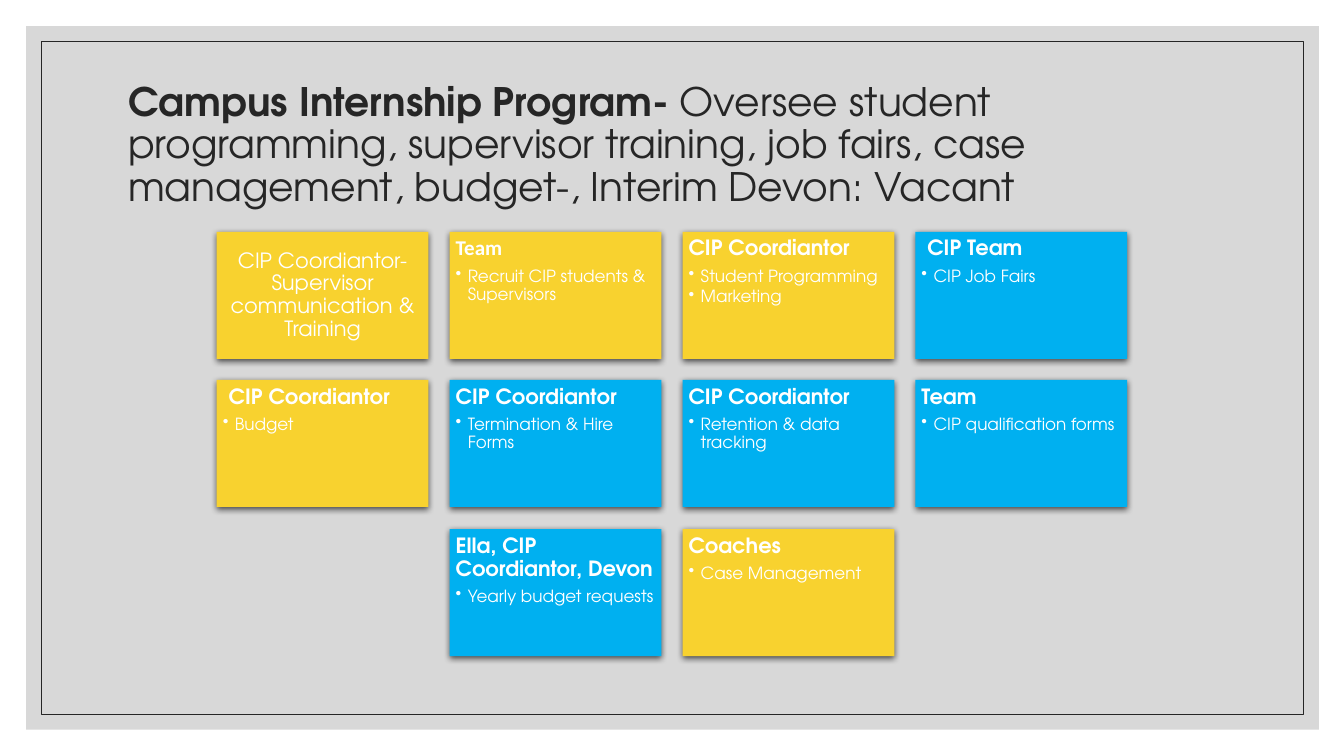
import pptx
import pptx.util
import pptx.dml.color
import pptx.enum.shapes
import pptx.enum.text
import pptx.oxml
import pptx.oxml.ns

PX = 9144  # EMU in one px, 100 px to the inch
FONT = "TeX Gyre Adventor"
COLORS = {"panel": "BFBFBF", "ink": "262626", "yellow": "F8D22F",
          "blue": "00B0F0", "white": "FFFFFF", "shadow": "000000"}

COLUMNS = 4
CARD_WIDTH, CARD_HEIGHT = 210, 126
GRID_LEFT, GRID_TOP = 215, 230
COLUMN_PITCH, TWO_ROW_PITCH = 231, 295

# Each card: fill, heading, duties
ROWS = [
    [("yellow", "CIP Coordiantor-Supervisor communication & Training", []),
     ("yellow", "Team", ["Recruit CIP students & Supervisors"]),
     ("yellow", "CIP Coordiantor", ["Student Programming", "Marketing"]),
     ("blue", " CIP Team", ["CIP Job Fairs"])],
    [("yellow", " CIP Coordiantor", ["Budget"]),
     ("blue", "CIP Coordiantor", ["Termination & Hire Forms"]),
     ("blue", "CIP Coordiantor", ["Retention & data tracking"]),
     ("blue", "Team", ["CIP qualification forms"])],
    [("blue", "Ella, CIP Coordiantor, Devon", ["Yearly budget requests"]),
     ("yellow", "Coaches", ["Case Management"])],
]


def px(length):
    return pptx.util.Emu(length * PX)


def rgb(name):
    return pptx.dml.color.RGBColor.from_string(COLORS[name])


def xml(tag, attributes, inner=""):
    namespace = pptx.oxml.ns.nsdecls("a")
    return pptx.oxml.parse_xml(f"<a:{tag} {namespace} {attributes}>{inner}</a:{tag}>")


def add_rectangle(slide, left, top, width, height):
    rectangle = slide.shapes.add_shape(
        pptx.enum.shapes.MSO_SHAPE.RECTANGLE,
        px(left), px(top), px(width), px(height))
    rectangle.shadow.inherit = False
    return rectangle


def format_run(run, size, color, bold, font=FONT):
    run.font.name = font
    run.font.size = pptx.util.Pt(size)
    run.font.bold = bold
    run.font.color.rgb = rgb(color)


def format_paragraph(paragraph, align, space_after):
    paragraph.alignment = align
    paragraph.line_spacing = 0.9
    paragraph.space_before = pptx.util.Pt(0)
    paragraph.space_after = pptx.util.Pt(space_after)


def add_background(slide):
    panel = add_rectangle(slide, 26, 26, 1282, 698)
    panel.fill.solid()
    panel.fill.fore_color.rgb = rgb("panel")
    panel.line.fill.background()
    panel_color = panel.fill._xPr.find(".//" + pptx.oxml.ns.qn("a:srgbClr"))
    panel_color.append(xml("alpha", 'val="60000"'))

    border = add_rectangle(slide, 41, 41, 1252, 668)
    border.fill.background()
    border.line.color.rgb = rgb("ink")
    border.line.width = pptx.util.Pt(0.5)


def add_title(slide, program, summary):
    title = slide.shapes.title
    title.left, title.top, title.width, title.height = px(117), px(70), px(1100), px(150)
    frame = title.text_frame
    frame.auto_size = pptx.enum.text.MSO_AUTO_SIZE.NONE
    frame.vertical_anchor = pptx.enum.text.MSO_ANCHOR.MIDDLE
    paragraph = frame.paragraphs[0]
    format_paragraph(paragraph, pptx.enum.text.PP_ALIGN.LEFT, 6)
    for text, bold in ((program, True), (summary, False)):
        run = paragraph.add_run()
        run.text = text
        format_run(run, 28, "ink", bold)
    # Bring the title in front of the background
    slide.shapes._spTree.append(title._element)


def add_duty(frame, duty):
    paragraph = frame.add_paragraph()
    paragraph.text = duty
    paragraph.level = 1
    format_paragraph(paragraph, pptx.enum.text.PP_ALIGN.LEFT, 2)
    format_run(paragraph.runs[0], 12, "white", False)
    properties = paragraph._p.get_or_add_pPr()
    properties.set("marL", str(px(12)))
    properties.set("indent", str(-px(12)))
    properties.append(xml("buChar", 'char="•"'))


def add_card(slide, left, top, color, heading, duties):
    card = add_rectangle(slide, left, top, CARD_WIDTH, CARD_HEIGHT)
    card.fill.solid()
    card.fill.fore_color.rgb = rgb(color)
    card.line.fill.background()

    # Soft shadow below the card
    effects = card._element.spPr.find(pptx.oxml.ns.qn("a:effectLst"))
    effects.append(xml(
        "outerShdw", 'blurRad="57150" dist="19050" dir="5400000" algn="ctr" rotWithShape="0"',
        f'<a:srgbClr val="{COLORS["shadow"]}"><a:alpha val="63000"/></a:srgbClr>'))

    # A card without duties centres its heading
    anchor, align = pptx.enum.text.MSO_ANCHOR, pptx.enum.text.PP_ALIGN
    frame = card.text_frame
    frame.word_wrap = True
    frame.margin_left = frame.margin_right = px(6)
    frame.margin_top = frame.margin_bottom = px(6)
    frame.vertical_anchor = anchor.TOP if duties else anchor.MIDDLE
    frame.text = heading
    paragraph = frame.paragraphs[0]
    format_paragraph(paragraph, align.LEFT if duties else align.CENTER, 5)
    font = "Calibri" if "Recruit CIP students & Supervisors" in duties else FONT
    format_run(paragraph.runs[0], 15, "white", bool(duties), font)
    for duty in duties:
        add_duty(frame, duty)


def add_cards(slide):
    for row, cards in enumerate(ROWS):
        first_column = (COLUMNS - len(cards)) // 2
        top = GRID_TOP + row * TWO_ROW_PITCH // 2
        for column, card in enumerate(cards, first_column):
            add_card(slide, GRID_LEFT + column * COLUMN_PITCH, top, *card)


def main():
    presentation = pptx.Presentation()
    presentation.slide_width, presentation.slide_height = px(1333), px(750)
    slide = presentation.slides.add_slide(presentation.slide_layouts[5])
    add_background(slide)
    add_title(slide, "Campus Internship Program- ",
              "Oversee student programming, supervisor training, job fairs, "
              "case management, budget-, Interim Devon: Vacant")
    add_cards(slide)
    presentation.save("out.pptx")


if __name__ == "__main__":
    main()
